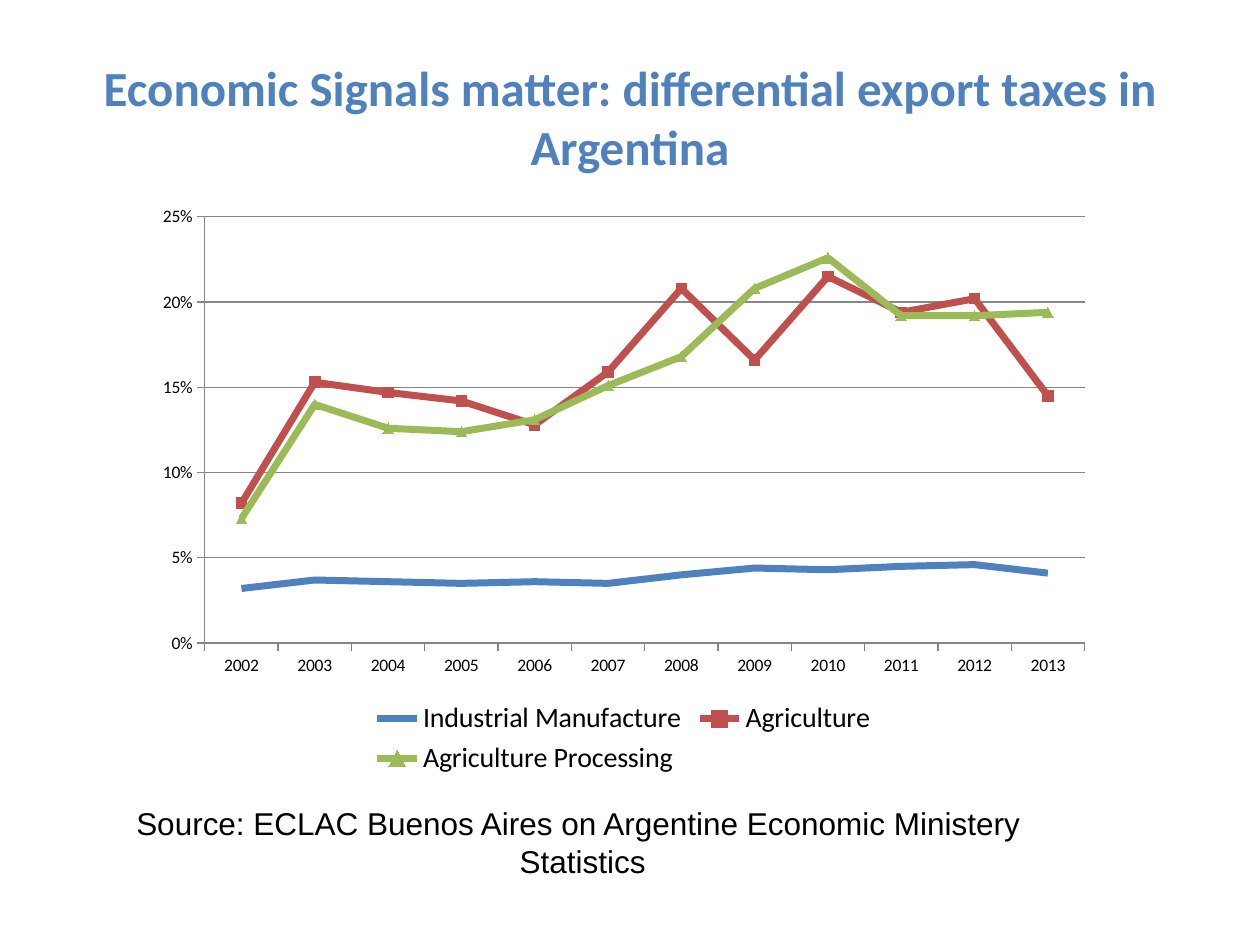
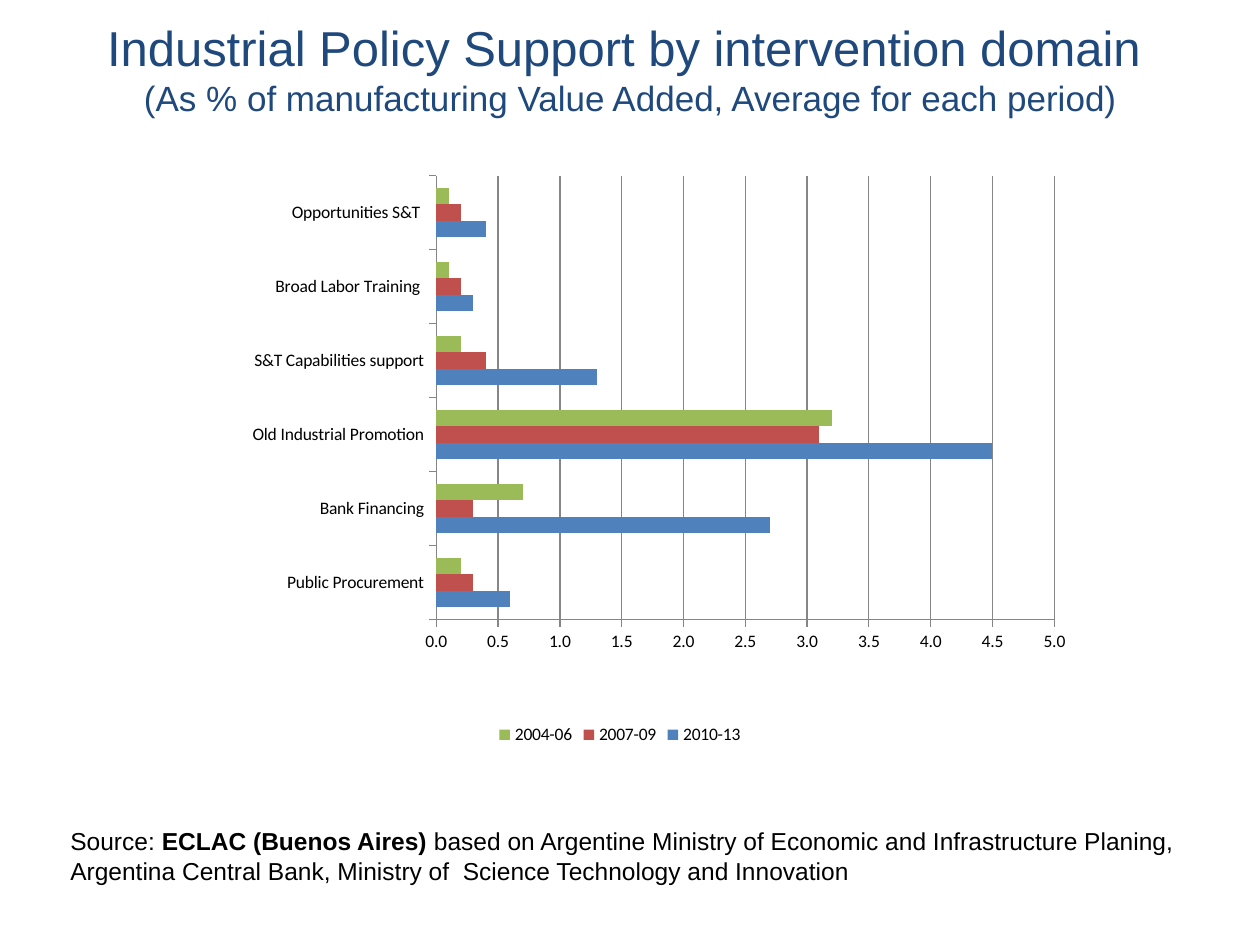
from lxml.etree import SubElement
from pptx import Presentation
from pptx.chart.data import CategoryChartData
from pptx.dml.color import RGBColor
from pptx.enum.chart import XL_CHART_TYPE, XL_LEGEND_POSITION, XL_MARKER_STYLE, XL_TICK_MARK
from pptx.enum.text import MSO_ANCHOR, PP_ALIGN
from pptx.oxml.ns import qn
from pptx.util import Inches, Pt

COLORS = {
    "text": "000000",
    "blue": "4F81BD",
    "red": "C0504D",
    "green": "9BBB59",
    "navy": "1F497D",
    "axis": "868686",
}
TEXT_FONT = "Arial"
CHART_FONT = "Calibri"

TAX_YEARS = [str(year) for year in range(2002, 2014)]
TAX_SERIES = {
    "Industrial Manufacture": (0.032, 0.037, 0.036, 0.035, 0.036, 0.035,
                               0.04, 0.044, 0.043, 0.045, 0.046, 0.041),
    "Agriculture": (0.082, 0.153, 0.147, 0.142, 0.128, 0.159,
                    0.208, 0.166, 0.215, 0.194, 0.202, 0.145),
    "Agriculture Processing": (0.073, 0.14, 0.126, 0.124, 0.131, 0.151,
                               0.168, 0.208, 0.226, 0.192, 0.192, 0.194),
}
TAX_MARKERS = (XL_MARKER_STYLE.NONE, XL_MARKER_STYLE.SQUARE, XL_MARKER_STYLE.TRIANGLE)

POLICY_DOMAINS = ["Public Procurement", " Bank Financing", "Old Industrial Promotion",
                  "S&T Capabilities support", "Broad Labor Training ", "Opportunities S&T "]
POLICY_SERIES = {
    "2010-13": (0.6, 2.7, 4.5, 1.3, 0.3, 0.4),
    "2007-09": (0.3, 0.3, 3.1, 0.4, 0.2, 0.2),
    "2004-06": (0.2, 0.7, 3.2, 0.2, 0.1, 0.1),
}
POLICY_PLOT = {"x": 0.303, "y": 0.051, "w": 0.663, "h": 0.734}


def rgb(name):
    """Return the named colour."""
    return RGBColor.from_string(COLORS[name])


def style_font(font, name, size, color="text", bold=False):
    """Set the face, size, colour and weight of a font."""
    font.name = name
    font.size = Pt(size)
    font.bold = bold
    font.color.rgb = rgb(color)


def add_text(slide, box, align, anchor=MSO_ANCHOR.TOP):
    """Add an empty wrapping text box and return its paragraph."""
    shape = slide.shapes.add_textbox(*map(Inches, box))
    text_frame = shape.text_frame
    text_frame.word_wrap = True
    text_frame.vertical_anchor = anchor
    paragraph = text_frame.paragraphs[0]
    paragraph.alignment = align
    return paragraph


def style_axis(axis):
    """Give an axis outside ticks and a thin grey line."""
    axis.major_tick_mark = XL_TICK_MARK.OUTSIDE
    axis.minor_tick_mark = XL_TICK_MARK.NONE
    axis.format.line.color.rgb = rgb("axis")
    axis.format.line.width = Pt(0.75)


def add_chart(slide, kind, box, categories, series, number_format, maximum, step, legend_size=10):
    """Add a chart with grey gridlines and a legend below it."""
    data = CategoryChartData(number_format=number_format)
    data.categories = categories
    for name, values in series.items():
        data.add_series(name, values)
    chart = slide.shapes.add_chart(kind, *map(Inches, box), data).chart
    style_font(chart.font, CHART_FONT, 10)
    chart.has_title = False
    chart.has_legend = True
    chart.legend.position = XL_LEGEND_POSITION.BOTTOM
    chart.legend.include_in_layout = False
    style_font(chart.legend.font, CHART_FONT, legend_size)

    value_axis = chart.value_axis
    value_axis.minimum_scale = 0
    value_axis.maximum_scale = maximum
    value_axis.major_unit = step
    value_axis.tick_labels.number_format = number_format
    value_axis.tick_labels.number_format_is_linked = False
    value_axis.has_major_gridlines = True
    gridline = value_axis.major_gridlines.format.line
    gridline.color.rgb = rgb("axis")
    gridline.width = Pt(0.75)
    style_axis(value_axis)
    style_axis(chart.category_axis)
    chart.plots[0].vary_by_categories = False
    return chart


def set_inner_plot(chart, fractions):
    """Fix the inner plot area at fractions of the chart size."""
    plot_area = chart.plots[0]._element.getparent()
    for layout in plot_area.findall(qn("c:layout")):
        plot_area.remove(layout)
    layout = SubElement(plot_area, qn("c:layout"))
    plot_area.insert(0, layout)
    manual = SubElement(layout, qn("c:manualLayout"))
    settings = {"layoutTarget": "inner", "xMode": "edge", "yMode": "edge", **fractions}
    for tag, value in settings.items():
        SubElement(manual, qn(f"c:{tag}")).set("val", str(value))


def build_tax_slide(slide):
    """Build the slide on export taxes."""
    title = add_text(slide, (0.5, 0.3, 9, 1.25), PP_ALIGN.CENTER, MSO_ANCHOR.MIDDLE)
    title.text = "Economic Signals matter: differential export taxes in Argentina"
    style_font(title.runs[0].font, CHART_FONT, 28, "blue", True)

    source = add_text(slide, (0.49, 6.33, 8.27, 0.71), PP_ALIGN.CENTER)
    source.text = "Source: ECLAC Buenos Aires on Argentine Economic Ministery  Statistics"
    style_font(source.runs[0].font, TEXT_FONT, 18)

    chart = add_chart(slide, XL_CHART_TYPE.LINE_MARKERS, (1.14, 1.55, 7.62, 4.65),
                      TAX_YEARS, TAX_SERIES, "0%", 0.25, 0.05, 16)
    for series, color, marker in zip(chart.series, ("blue", "red", "green"), TAX_MARKERS):
        series.smooth = False
        series.format.line.color.rgb = rgb(color)
        series.format.line.width = Pt(4)
        series.marker.style = marker
        if marker != XL_MARKER_STYLE.NONE:
            series.marker.size = 6
            series.marker.format.fill.solid()
            series.marker.format.fill.fore_color.rgb = rgb(color)
            series.marker.format.line.fill.background()


def build_policy_slide(slide):
    """Build the slide on industrial policy support."""
    source = add_text(slide, (0.46, 6.51, 9.54, 0.81), PP_ALIGN.LEFT)
    parts = (
        ("Source: ", False),
        ("ECLAC (Buenos Aires) ", True),
        ("based on Argentine Ministry of Economic and Infrastructure Planing, "
         "Argentina Central Bank, Ministry of  Science Technology and Innovation", False),
    )
    for text, bold in parts:
        run = source.add_run()
        run.text = text
        style_font(run.font, TEXT_FONT, 14, bold=bold)

    title = add_text(slide, (0.22, 0.09, 9.57, 0.91), PP_ALIGN.CENTER)
    title.text = ("Industrial Policy Support by intervention domain \v"
                  "(As % of manufacturing Value Added, Average for each period)")
    for run, size in zip(title.runs, (28, 20)):
        style_font(run.font, TEXT_FONT, size, "navy")

    chart = add_chart(slide, XL_CHART_TYPE.BAR_CLUSTERED, (1.22, 1.15, 7.4, 4.8),
                      POLICY_DOMAINS, POLICY_SERIES, "0.0", 5, 0.5)
    set_inner_plot(chart, POLICY_PLOT)
    chart.plots[0].gap_width = 150
    for series, color in zip(chart.series, ("blue", "red", "green")):
        series.format.fill.solid()
        series.format.fill.fore_color.rgb = rgb(color)


def main():
    """Build both slides and save the presentation."""
    presentation = Presentation()
    presentation.slide_width = Inches(10)
    presentation.slide_height = Inches(7.5)
    blank_layout = presentation.slide_layouts[6]
    for build in (build_tax_slide, build_policy_slide):
        build(presentation.slides.add_slide(blank_layout))
    presentation.save("out.pptx")


if __name__ == "__main__":
    main()
